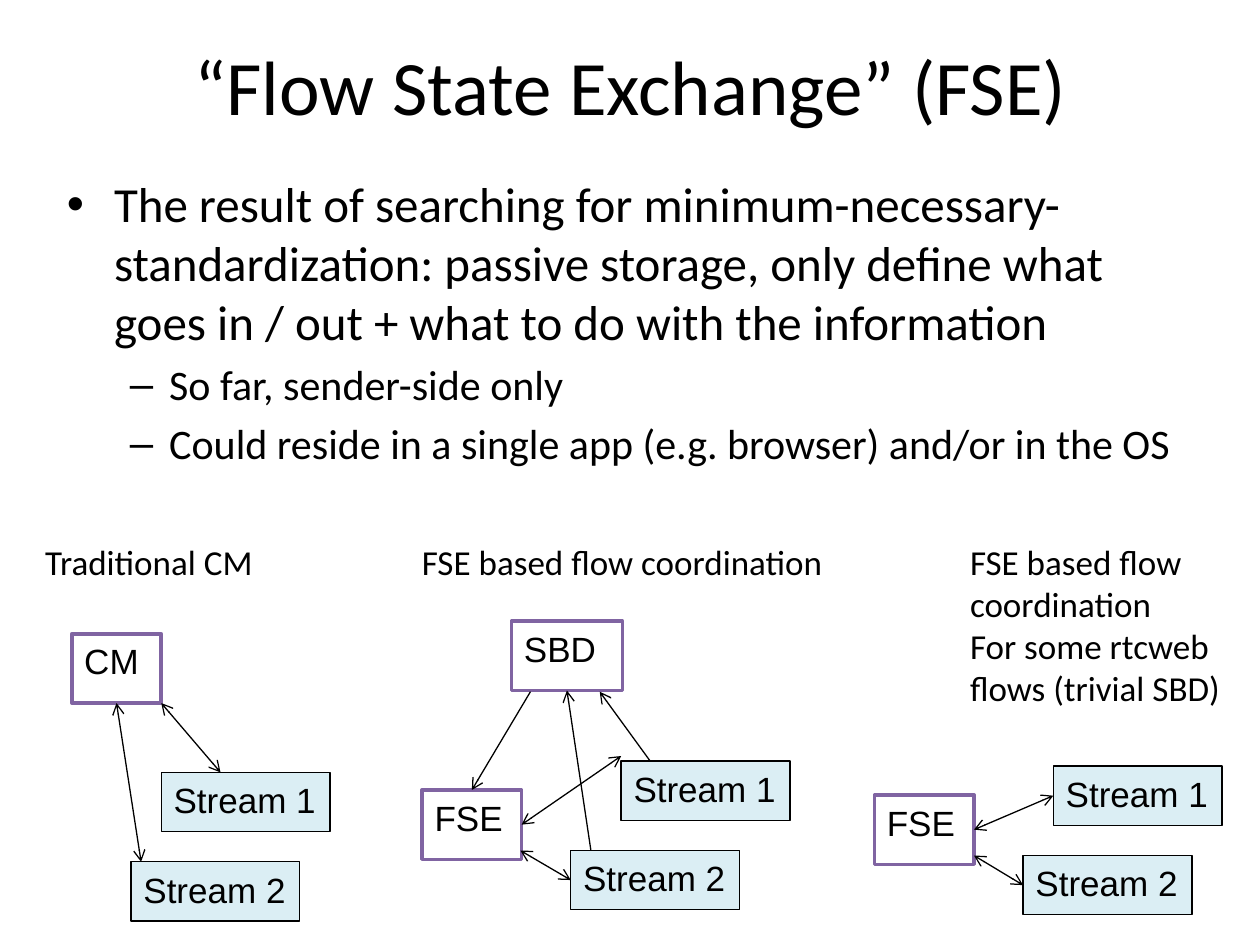
from lxml import etree
from pptx import Presentation
from pptx import util as u
from pptx.dml.color import RGBColor
from pptx.enum import shapes, text
from pptx.oxml.ns import qn

BLACK, WHITE, PURPLE, PALE_BLUE = "000000", "FFFFFF", "8064A2", "DBEEF4"
TOP, LEFT, BOTTOM, RIGHT = range(4)
CAPTION_TOP = 4.24


def color(value):
    return RGBColor.from_string(value)


def write(paragraph, content, *, size=20, font="Calibri", align=None, level=0):
    paragraph.text = content
    paragraph.level = level
    paragraph.alignment = align
    for run in paragraph.runs:
        run.font.size = u.Pt(size)
        run.font.name = font
        run.font.color.rgb = color(BLACK)


def place(shape, left, top, width, height):
    shape.left, shape.top = u.Inches(left), u.Inches(top)
    shape.width, shape.height = u.Inches(width), u.Inches(height)


def add_title(slide, content):
    title = slide.shapes.title
    place(title, 0.51, 0.05, 8.99, 1.25)
    title.text_frame.vertical_anchor = text.MSO_ANCHOR.MIDDLE
    write(title.text_frame.paragraphs[0], content, size=44,
          align=text.PP_ALIGN.CENTER)


def add_body(slide, items):
    body = slide.placeholders[1]
    place(body, 0.43, 1.33, 8.99, 4.5)
    frame = body.text_frame
    frame.auto_size = text.MSO_AUTO_SIZE.NONE
    for index, (level, content) in enumerate(items):
        paragraph = frame.add_paragraph() if index else frame.paragraphs[0]
        write(paragraph, content, size=28 - 4 * level, level=level)


def add_caption(slide, left, width, *lines, height=0.44):
    box = slide.shapes.add_textbox(u.Inches(left), u.Inches(CAPTION_TOP),
                                   u.Inches(width), u.Inches(height))
    frame = box.text_frame
    frame.word_wrap = False
    frame.auto_size = text.MSO_AUTO_SIZE.SHAPE_TO_FIT_TEXT
    for index, line in enumerate(lines):
        paragraph = frame.add_paragraph() if index else frame.paragraphs[0]
        write(paragraph, line)


def add_box(slide, label, left, top, width, height=0.55, *,
            fill=WHITE, line=PURPLE, weight=2):
    box = slide.shapes.add_shape(
        shapes.MSO_SHAPE.RECTANGLE, u.Inches(left), u.Inches(top),
        u.Inches(width), u.Inches(height))
    box.shadow.inherit = False
    box.fill.solid()
    box.fill.fore_color.rgb = color(fill)
    box.line.color.rgb = color(line)
    box.line.width = u.Pt(weight)
    box.text_frame.vertical_anchor = text.MSO_ANCHOR.TOP
    write(box.text_frame.paragraphs[0], label, font="Arial",
          align=text.PP_ALIGN.LEFT)
    return box


def add_streams(slide, left, top, shift):
    """Stream 2 sits below Stream 1, moved left by shift."""
    return [add_box(slide, f"Stream {number + 1}", left - number * shift,
                    top + number * 0.71, 1.34, 0.47,
                    fill=PALE_BLUE, line=BLACK, weight=0.75)
            for number in range(2)]


def add_arrow(slide, start, end, *, both=True):
    """Each end is an (x, y) point or a (box, side) pair; start has a head."""
    connector = slide.shapes.add_connector(
        shapes.MSO_CONNECTOR.STRAIGHT, 0, 0, 0, 0)
    (connector.begin_x, connector.begin_y), (connector.end_x, connector.end_y) = [
        (0, 0) if hasattr(point[0], "text_frame") else map(u.Inches, point)
        for point in (start, end)]
    for point, connect in ((start, connector.begin_connect),
                           (end, connector.end_connect)):
        if hasattr(point[0], "text_frame"):
            connect(*point)
    connector.line.color.rgb = color(BLACK)
    connector.line.width = u.Pt(0.75)
    line = connector.line._get_or_add_ln()
    for tag in ("a:headEnd", "a:tailEnd") if both else ("a:headEnd",):
        etree.SubElement(line, qn(tag), type="arrow")
    etree.SubElement(connector._element.spPr, qn("a:effectLst"))


def draw_traditional(slide):
    add_caption(slide, 0.26, 1.89, "Traditional CM")
    manager = add_box(slide, "CM", 0.57, 5.03, 0.71)
    add_streams(slide, 1.28, 6.13, 0.24)
    add_arrow(slide, (1.28, 5.58), (1.75, 6.13))
    add_arrow(slide, (manager, BOTTOM), (1.12, 6.84))


def draw_coordination(slide):
    add_caption(slide, 3.25, 3.42, "FSE based flow coordination")
    detector = add_box(slide, "SBD", 4.06, 4.93, 0.88)
    _, second = add_streams(slide, 4.93, 6.04, 0.4)
    exchange = add_box(slide, "FSE", 3.35, 6.27, 0.79)
    add_arrow(slide, (second, LEFT), (4.13, 6.75))
    add_arrow(slide, (4.93, 6), (exchange, RIGHT))
    add_arrow(slide, (exchange, TOP), (4.21, 5.49), both=False)
    add_arrow(slide, (detector, BOTTOM), (4.69, 6.75), both=False)
    add_arrow(slide, (4.76, 5.49), (5.16, 6.04), both=False)


def draw_rtcweb(slide):
    add_caption(slide, 7.6, 2.21, "FSE based flow\vcoordination",
                "For some rtcweb\vflows (trivial SBD)", height=1.45)
    first, second = add_streams(slide, 8.36, 6.08, 0.24)
    exchange = add_box(slide, "FSE", 6.94, 6.31, 0.79)
    add_arrow(slide, (second, LEFT), (7.73, 6.79))
    add_arrow(slide, (first, LEFT), (exchange, RIGHT))


def main():
    presentation = Presentation()
    presentation.slide_width = u.Inches(10)
    presentation.slide_height = u.Inches(7.5)
    # Title and Content layout: the list uses its body placeholder
    slide = presentation.slides.add_slide(presentation.slide_layouts[1])

    add_title(slide, "“Flow State Exchange” (FSE)")
    add_body(slide, [
        (0, "The result of searching for minimum-necessary-standardization: "
            "passive storage, only define what goes in / out + what to do "
            "with the information"),
        (1, "So far, sender-side only"),
        (1, "Could reside in a single app (e.g. browser) and/or in the OS"),
    ])

    # Three diagrams, left to right
    draw_traditional(slide)
    draw_coordination(slide)
    draw_rtcweb(slide)
    presentation.save("out.pptx")


if __name__ == "__main__":
    main()
